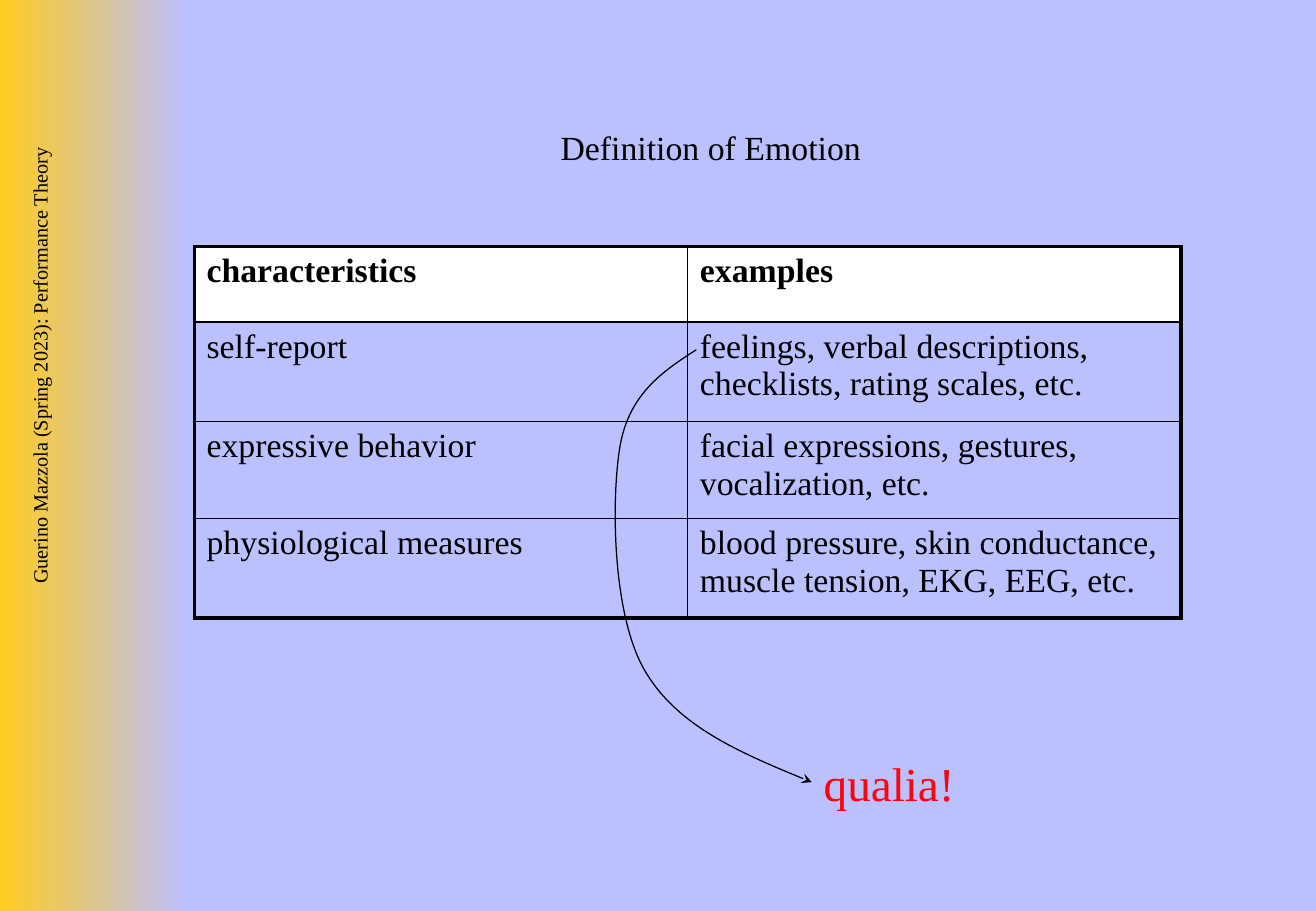
"""Build the slide that defines emotion by its characteristics."""
from dataclasses import dataclass

from lxml.etree import SubElement
from pptx import Presentation
from pptx.dml.color import RGBColor
from pptx.enum.shapes import MSO_SHAPE
from pptx.enum.text import MSO_ANCHOR, PP_ALIGN
from pptx.oxml.ns import qn
from pptx.util import Inches, Pt

TITLE = "Definition of Emotion"
COURSE = "Guerino Mazzola (Spring 2023): Performance Theory"
CONCLUSION = "qualia!"
ROWS = [
    ("characteristics", "examples"),
    ("self-report", "feelings, verbal descriptions, checklists, rating scales, etc."),
    ("expressive behavior", "facial expressions, gestures, vocalization, etc."),
    ("physiological measures", "blood pressure, skin conductance, muscle tension, EKG, EEG, etc."),
]

GRID_COLUMNS, GRID_ROWS = 1083, 750
CELL = Inches(0.01)
BAND = (0, 0, 154, GRID_ROWS)
COURSE_BOX = (-240, 366, 565, 50)
TITLE_BOX = (393, 99, 384, 43)
CONCLUSION_BOX = (668, 616, 128, 57)
TABLE_BOX = (160, 203, 812, 306)
ROW_HEIGHTS = (62, 82, 80, 82)
ARROW_START = (573, 288)
ARROW_CURVES = [
    [(545, 306), (517, 325), (510, 369)],
    [(503, 413), (504, 505), (530, 551)],
    [(556, 597), (612, 621), (668, 644)],
]


@dataclass(frozen=True)
class Theme:
    font: str = "Times New Roman"
    background: RGBColor = RGBColor.from_string("BBC0FF")
    gold: RGBColor = RGBColor.from_string("FFCB1F")
    ink: RGBColor = RGBColor.from_string("000000")
    header: RGBColor = RGBColor.from_string("FFFFFF")
    accent: RGBColor = RGBColor.from_string("FF020B")
    small: int = 12
    body: int = 20
    large: int = 28
    outer_line: float = 2.25
    inner_line: float = 1
    arrow_line: float = 0.75


THEME = Theme()


def place(box):
    return [length * CELL for length in box]


def write(frame, text, size, color=THEME.ink, bold=False, align=PP_ALIGN.LEFT):
    frame.text = text
    para = frame.paragraphs[0]
    para.alignment = align
    font = para.runs[0].font
    font.name, font.size, font.bold = THEME.font, Pt(size), bold
    font.color.rgb = color


def add_band(slide):
    band = slide.shapes.add_shape(MSO_SHAPE.RECTANGLE, *place(BAND))
    band.shadow.inherit = False
    band.line.fill.background()
    band.fill.gradient()
    band.fill.gradient_angle = 0
    for stop, color, position in zip(band.fill.gradient_stops, (THEME.gold, THEME.background), (0, 1)):
        stop.color.rgb = color
        stop.position = position


def set_title(slide):
    title = slide.shapes.title
    title.left, title.top, title.width, title.height = place(TITLE_BOX)
    title.text_frame.vertical_anchor = MSO_ANCHOR.TOP
    write(title.text_frame, TITLE, THEME.body, align=PP_ALIGN.CENTER)


def add_course(slide):
    box = slide.shapes.add_textbox(*place(COURSE_BOX))
    box.rotation = 270
    box.text_frame.word_wrap = True
    box.text_frame.margin_right = 13 * CELL
    write(box.text_frame, COURSE, THEME.small, align=PP_ALIGN.RIGHT)


def set_borders(cell, outer_sides):
    properties = cell._tc.get_or_add_tcPr()
    for index, side in enumerate(("lnL", "lnR", "lnT", "lnB")):
        width = THEME.outer_line if side in outer_sides else THEME.inner_line
        line = properties.makeelement(qn(f"a:{side}"), {"w": str(Pt(width))})
        fill = SubElement(line, qn("a:solidFill"))
        SubElement(fill, qn("a:srgbClr"), val=str(THEME.ink))
        properties.insert(index, line)


def add_table(slide):
    table = slide.shapes.add_table(len(ROWS), len(ROWS[0]), *place(TABLE_BOX)).table
    table.first_row = table.horz_banding = False
    last_row, last_column = len(ROWS) - 1, len(ROWS[0]) - 1
    for row_index, (texts, height) in enumerate(zip(ROWS, ROW_HEIGHTS)):
        table.rows[row_index].height = height * CELL
        is_header = row_index == 0
        for column_index, text in enumerate(texts):
            cell = table.cell(row_index, column_index)
            write(cell.text_frame, text, THEME.body, bold=is_header)
            if is_header:
                cell.fill.solid()
                cell.fill.fore_color.rgb = THEME.header
            else:
                cell.fill.background()
            edges = {
                "lnL": column_index == 0,
                "lnR": column_index == last_column,
                "lnT": is_header,
                "lnB": row_index == last_row,
            }
            set_borders(cell, [side for side, is_outer in edges.items() if is_outer])


def add_conclusion(slide):
    box = slide.shapes.add_textbox(*place(CONCLUSION_BOX))
    box.text_frame.word_wrap = False
    write(box.text_frame, CONCLUSION, THEME.large, THEME.accent)


def add_arrow(slide):
    builder = slide.shapes.build_freeform(*ARROW_START, scale=CELL)
    builder.add_line_segments([point for curve in ARROW_CURVES for point in curve], close=False)
    arrow = builder.convert_to_shape()
    arrow.shadow.inherit = False
    arrow.fill.background()
    arrow.line.color.rgb = THEME.ink
    arrow.line.width = Pt(THEME.arrow_line)
    SubElement(arrow.line._get_or_add_ln(), qn("a:tailEnd"), type="stealth")
    outline = next(arrow._element.iter(qn("a:path")))
    segments = outline.findall(qn("a:lnTo"))
    for first in range(0, len(segments), 3):
        curve = SubElement(outline, qn("a:cubicBezTo"))
        for segment in segments[first:first + 3]:
            curve.append(segment[0])
            outline.remove(segment)


def main():
    deck = Presentation()
    deck.slide_width, deck.slide_height = GRID_COLUMNS * CELL, GRID_ROWS * CELL
    slide = deck.slides.add_slide(deck.slide_layouts[5])
    slide.background.fill.solid()
    slide.background.fill.fore_color.rgb = THEME.background
    add_band(slide)
    set_title(slide)
    add_course(slide)
    add_table(slide)
    add_conclusion(slide)
    add_arrow(slide)
    deck.save("out.pptx")


if __name__ == "__main__":
    main()
